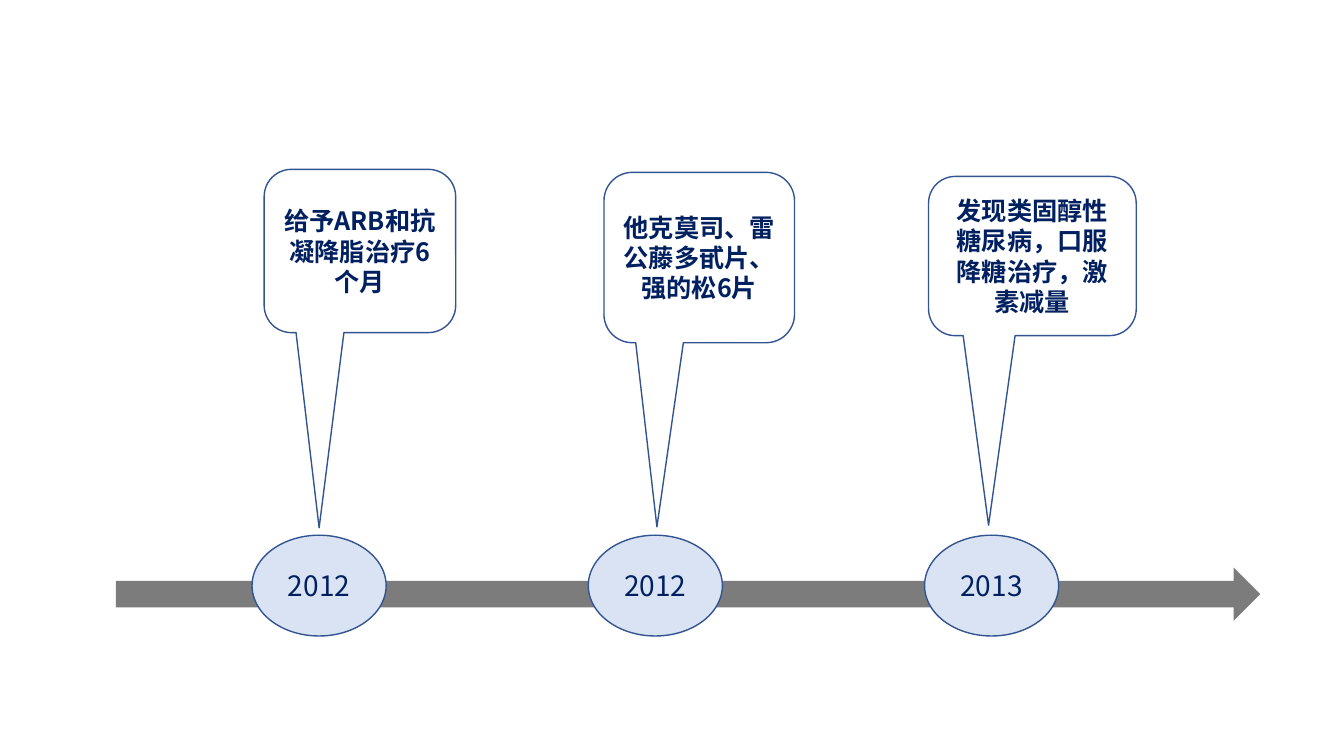
from dataclasses import dataclass
from typing import Optional

from lxml import etree
from pptx import Presentation
from pptx.dml.color import RGBColor
from pptx.enum.shapes import MSO_SHAPE
from pptx.enum.text import MSO_ANCHOR, PP_ALIGN
from pptx.oxml.ns import qn
from pptx.shapes.autoshape import Shape
from pptx.slide import Slide
from pptx.util import Inches, Pt

ARROW = MSO_SHAPE.RIGHT_ARROW
OVAL = MSO_SHAPE.OVAL
CALLOUT = MSO_SHAPE.ROUNDED_RECTANGULAR_CALLOUT
MIDDLE = MSO_ANCHOR.MIDDLE
CENTER = PP_ALIGN.CENTER

FONT = "Noto Sans CJK SC"
NAVY = "002060"
OUTLINE = "325491"
PALE_BLUE = "DAE3F3"
GRAY = "7C7C7C"

YEAR_LEFT, YEAR_TOP, YEAR_STEP = 2.5, 5.31, 3.335
YEAR_WIDTH, YEAR_HEIGHT = 1.33, 1.0
CORNER = 0.167


@dataclass(frozen=True)
class Box:
    left: float
    top: float
    width: float
    height: float


@dataclass(frozen=True)
class Event:
    year: str
    treatment: str
    bubble: Box
    pointer: tuple[float, float]


EVENTS = [
    Event("2012", "给予ARB和抗凝降脂治疗6个月",
          Box(2.62, 1.68, 1.9, 1.62), (-0.213, 1.695)),
    Event("2012", "他克莫司、雷公藤多甙片、强的松6片",
          Box(5.99, 1.71, 1.89, 1.69), (-0.222, 1.581)),
    Event("2013", "发现类固醇性糖尿病，口服降糖治疗，激素减量",
          Box(9.21, 1.75, 2.06, 1.58), (-0.211, 1.69)),
]


def rgb(value: str) -> RGBColor:
    return RGBColor.from_string(value)


def add_shape(slide: Slide, preset: MSO_SHAPE, box: Box,
              fill: Optional[str], line: Optional[str]) -> Shape:
    shape = slide.shapes.add_shape(
        preset, Inches(box.left), Inches(box.top),
        Inches(box.width), Inches(box.height))
    shape.shadow.inherit = False
    if fill:
        shape.fill.solid()
        shape.fill.fore_color.rgb = rgb(fill)
    else:
        shape.fill.background()
    if line:
        shape.line.color.rgb = rgb(line)
        shape.line.width = Pt(1)
    else:
        shape.line.fill.background()
    return shape


def write(shape: Shape, text: str, size: int, bold: bool) -> None:
    frame = shape.text_frame
    frame.text = text
    frame.word_wrap = True
    frame.vertical_anchor = MIDDLE
    paragraph = frame.paragraphs[0]
    paragraph.alignment = CENTER
    run = paragraph.runs[0]
    run.font.size = Pt(size)
    run.font.bold = bold
    run.font.color.rgb = rgb(NAVY)
    run.font.name = FONT
    east_asian = etree.SubElement(run.font._element, qn("a:ea"))
    east_asian.set("typeface", FONT)


def add_year(slide: Slide, event: Event, position: int) -> None:
    box = Box(YEAR_LEFT + position * YEAR_STEP, YEAR_TOP, YEAR_WIDTH, YEAR_HEIGHT)
    write(add_shape(slide, OVAL, box, PALE_BLUE, OUTLINE), event.year, 20, False)


def add_treatment(slide: Slide, event: Event) -> None:
    bubble = add_shape(slide, CALLOUT, event.bubble, None, OUTLINE)
    for index, value in enumerate((*event.pointer, CORNER)):
        bubble.adjustments[index] = value
    write(bubble, event.treatment, 18, True)


def main() -> None:
    deck = Presentation()
    deck.slide_width = Inches(13.33)
    deck.slide_height = Inches(7.5)
    slide = deck.slides.add_slide(deck.slide_layouts[6])

    add_shape(slide, ARROW, Box(1.15, 5.63, 11.35, 0.53), GRAY, None)
    for position, event in enumerate(EVENTS):
        add_year(slide, event, position)
    for event in EVENTS:
        add_treatment(slide, event)

    deck.save("out.pptx")


if __name__ == "__main__":
    main()
